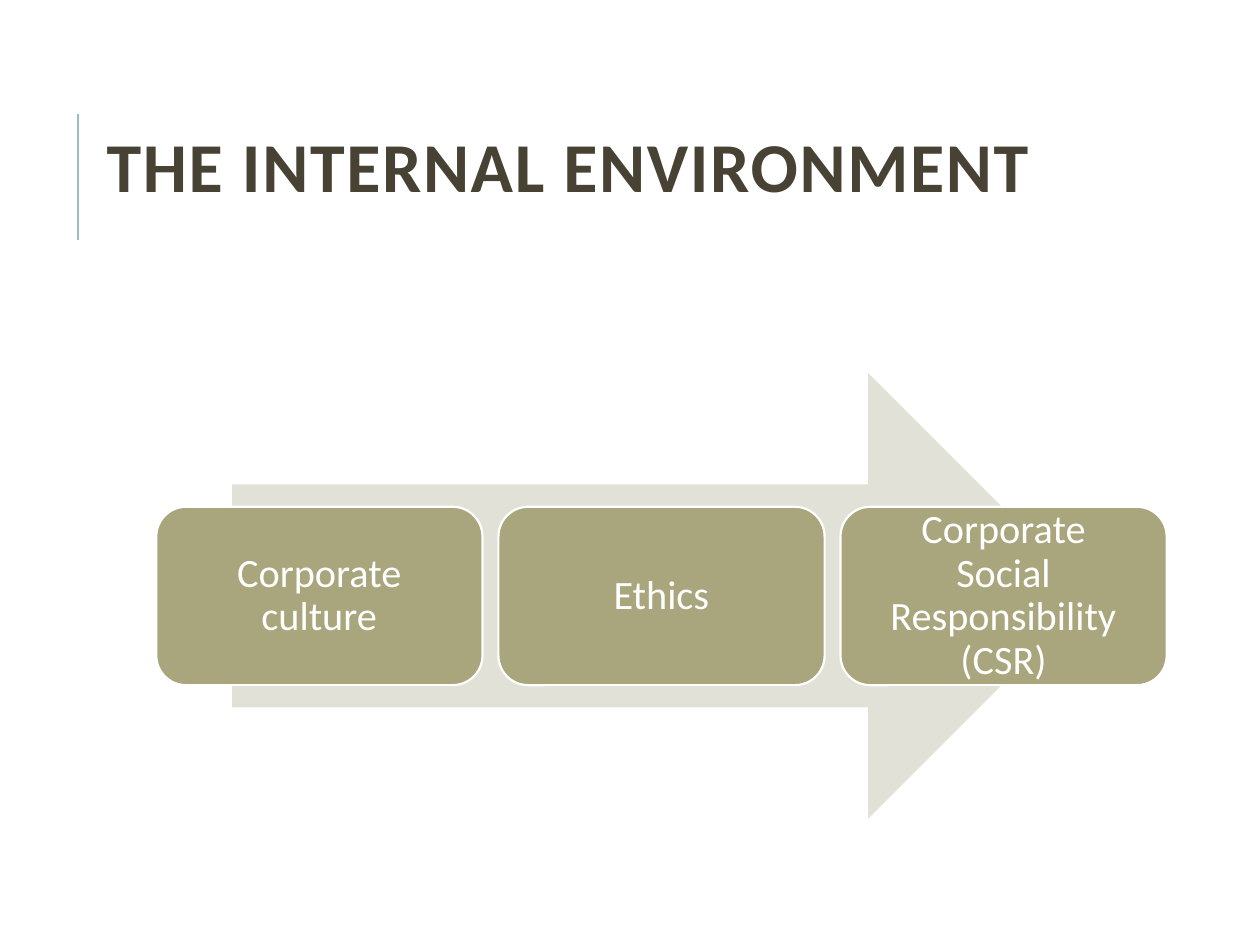
from lxml import etree
from pptx import Presentation
from pptx.dml.color import RGBColor
from pptx.enum.shapes import MSO_CONNECTOR, MSO_SHAPE
from pptx.enum.text import MSO_ANCHOR, PP_ALIGN
from pptx.oxml.ns import qn
from pptx.util import Cm, Pt

ARROW, CARD = MSO_SHAPE.RIGHT_ARROW, MSO_SHAPE.ROUNDED_RECTANGLE
STRAIGHT = MSO_CONNECTOR.STRAIGHT
TOP, MIDDLE = MSO_ANCHOR.TOP, MSO_ANCHOR.MIDDLE
LEFT, CENTER = PP_ALIGN.LEFT, PP_ALIGN.CENTER

COLORS = {"title": "474233", "rule": "9CBEBD", "arrow": "E2E1D7",
          "card": "A9A57C", "white": "FFFFFF"}
TITLE_FONT = {"name": "Calibri", "size": Pt(40), "bold": True}
CARD_FONT = {"name": "Calibri", "size": Pt(23), "bold": False}
FACTORS = ["Corporate culture", "Ethics", "Corporate Social Responsibility (CSR)"]


def color(name):
    return RGBColor.from_string(COLORS[name])


def write(shape, text, font, color_name, align, spacing, frame):
    tf = shape.text_frame
    for key, value in {"word_wrap": True, **frame}.items():
        setattr(tf, key, value)
    p = tf.paragraphs[0]
    p.alignment, p.line_spacing = align, spacing
    r = p.add_run()
    r.text = text
    for key, value in font.items():
        setattr(r.font, key, value)
    r.font.color.rgb = color(color_name)
    return r


def add_filled(s, kind, box, fill):
    sp = s.shapes.add_shape(kind, *map(Cm, box))
    sp.shadow.inherit = False
    sp.fill.solid()
    sp.fill.fore_color.rgb = color(fill)
    sp.line.fill.background()
    return sp


def add_title(s, box, text):
    """Place the title with a vertical rule just left of its box."""
    x, y, w, h = box
    rule_x, rule_y = x - 0.33, y - 0.22
    rule = s.shapes.add_connector(STRAIGHT, Cm(rule_x), Cm(rule_y + 2.54),
                                  Cm(rule_x), Cm(rule_y))
    rule.line.color.rgb = color("rule")
    rule.line.width = Pt(1.5)
    etree.SubElement(rule._element.spPr, qn("a:effectLst"))

    tb = s.shapes.add_textbox(*map(Cm, box))
    r = write(tb, text, TITLE_FONT, "title", LEFT, 0.8,
              {"vertical_anchor": TOP, "margin_top": Cm(0.28)})
    r.font._element.set("spc", "100")


def add_process(s, box, labels):
    """Place a row of equal cards over a wide arrow."""
    x, y, w, h = box
    arrow_w = 0.85 * w
    add_filled(s, ARROW, (x + (w - arrow_w) / 2, y, arrow_w, h), "arrow")

    gap, card_h = 0.32, 0.4 * h
    card_w = (w - gap * (len(labels) - 1)) / len(labels)
    frame = {"vertical_anchor": MIDDLE}
    for side in ("left", "right", "top", "bottom"):
        frame[f"margin_{side}"] = Cm(0.43)
    for i, label in enumerate(labels):
        card = add_filled(s, CARD, (x + i * (card_w + gap), y + (h - card_h) / 2,
                                    card_w, card_h), "card")
        card.line.color.rgb = color("white")
        card.line.width = Pt(1.25)
        write(card, label, CARD_FONT, "white", CENTER, 0.9, frame)


def main():
    prs = Presentation()
    prs.slide_width, prs.slide_height = Cm(25.4), Cm(19.05)
    s = prs.slides.add_slide(prs.slide_layouts[6])
    add_title(s, (1.9, 2.51, 22.86, 3.61), "THE INTERNAL ENVIRONMENT")
    add_process(s, (3.15, 7.52, 20.37, 8.99), FACTORS)
    prs.save("out.pptx")


if __name__ == "__main__":
    main()
